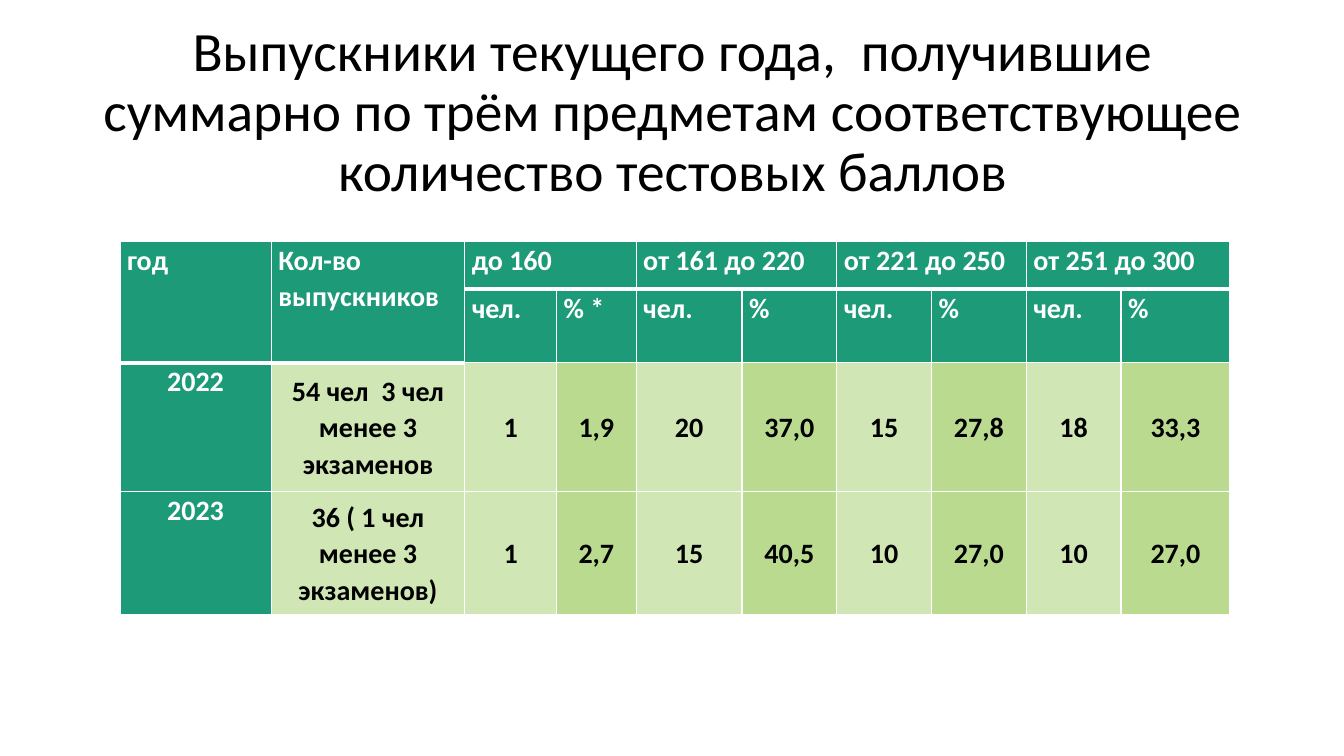
"""Build a slide with a table of graduates by total test score."""
from lxml import etree
from pptx import Presentation
from pptx.dml.color import RGBColor
from pptx.enum import text as t
from pptx.oxml.ns import qn
from pptx.util import Inches, Pt

TITLE = ("Выпускники текущего года,  получившие суммарно по трём предметам "
         "соответствующее количество тестовых баллов")
BANDS = ["до 160", "от 161 до 220", "от 221 до 250", "от 251 до 300"]
HEAD = ["год", "Кол-во выпускников"]
UNITS = ["чел.", "% *"] + ["чел.", "%"] * 3
YEARS = [
    ["2022", "54 чел  3 чел менее 3 экзаменов",
     "1", "1,9", "20", "37,0", "15", "27,8", "18", "33,3"],
    ["2023", "36 ( 1 чел менее 3 экзаменов)",
     "1", "2,7", "15", "40,5", "10", "27,0", "10", "27,0"],
]
WIDTHS = [1.5, 1.92, 0.91, 0.79, 1.05, 0.94, 0.94, 0.94, 0.94, 1.08]
HEIGHTS = [0.48, 0.48, 1.28, 1.22]
COLORS = {"head": "1D9A78", "light": "D1E6B5", "dark": "B9DA8F",
          "white": "FFFFFF", "black": "000000"}


def color(name):
    return RGBColor.from_string(COLORS[name])


def style(para, size, ink, align, space, bold=False):
    para.alignment, para.line_spacing = align, space
    for run in para.runs:
        font = run.font
        font.name, font.size, font.bold = "Calibri", Pt(size), bold
        font.color.rgb = color(ink)


def border(cell, top, bottom):
    props = cell._tc.get_or_add_tcPr()
    sides = [("L", 1), ("R", 1), ("T", top), ("B", bottom)]
    for place, (side, width) in enumerate(sides):
        line = etree.Element(qn("a:ln" + side), w=str(Pt(width)))
        fill = etree.SubElement(line, qn("a:solidFill"))
        etree.SubElement(fill, qn("a:srgbClr"), val=COLORS["white"])
        props.insert(place, line)


def dress(cell, row, col, words):
    head = row < 2
    green = head or col == 0
    shade = "head" if green else "dark" if col > 2 and col % 2 else "light"
    cell.fill.solid()
    cell.fill.fore_color.rgb = color(shade)
    cell.margin_left = cell.margin_right = Inches(0.07)
    cell.margin_top = cell.margin_bottom = 0
    cell.vertical_anchor = t.MSO_ANCHOR.TOP if green else t.MSO_ANCHOR.MIDDLE
    thick = row == 1 or (row == 2 and col < 2)
    border(cell, 3 if thick else 1, 3 if row == 0 or (row == 1 and col < 2) else 1)
    para = cell.text_frame.paragraphs[0]
    if words:
        para.text = words
    para.space_after = Pt(8)
    align = t.PP_ALIGN.JUSTIFY if head else t.PP_ALIGN.CENTER
    style(para, 20, "white" if green else "black", align, 1.07, True)


def main():
    deck = Presentation()
    deck.slide_width, deck.slide_height = Inches(13.33), Inches(7.5)
    slide = deck.slides.add_slide(deck.slide_layouts[5])

    title = slide.shapes.title
    title.left, title.top = Inches(0.92), Inches(0.4)
    title.width, title.height = Inches(11.5), Inches(1.45)
    frame = title.text_frame
    frame.text = TITLE
    frame.auto_size = t.MSO_AUTO_SIZE.NONE
    frame.vertical_anchor = t.MSO_ANCHOR.MIDDLE
    style(frame.paragraphs[0], 39.6, "black", t.PP_ALIGN.CENTER, 0.9)

    top = HEAD + [word for band in BANDS for word in (band, "")]
    rows = [top, ["", ""] + UNITS] + YEARS
    table = slide.shapes.add_table(
        len(rows), len(WIDTHS), Inches(1.19), Inches(2.39),
        Inches(sum(WIDTHS)), Inches(sum(HEIGHTS))).table
    for col, width in enumerate(WIDTHS):
        table.columns[col].width = Inches(width)
    for row, words in enumerate(rows):
        table.rows[row].height = Inches(HEIGHTS[row])
        for col, word in enumerate(words):
            dress(table.cell(row, col), row, col, word)
    for col in range(len(HEAD)):
        table.cell(0, col).merge(table.cell(1, col))
    for col in range(len(HEAD), len(WIDTHS), 2):
        table.cell(0, col).merge(table.cell(0, col + 1))

    deck.save("out.pptx")


if __name__ == "__main__":
    main()
